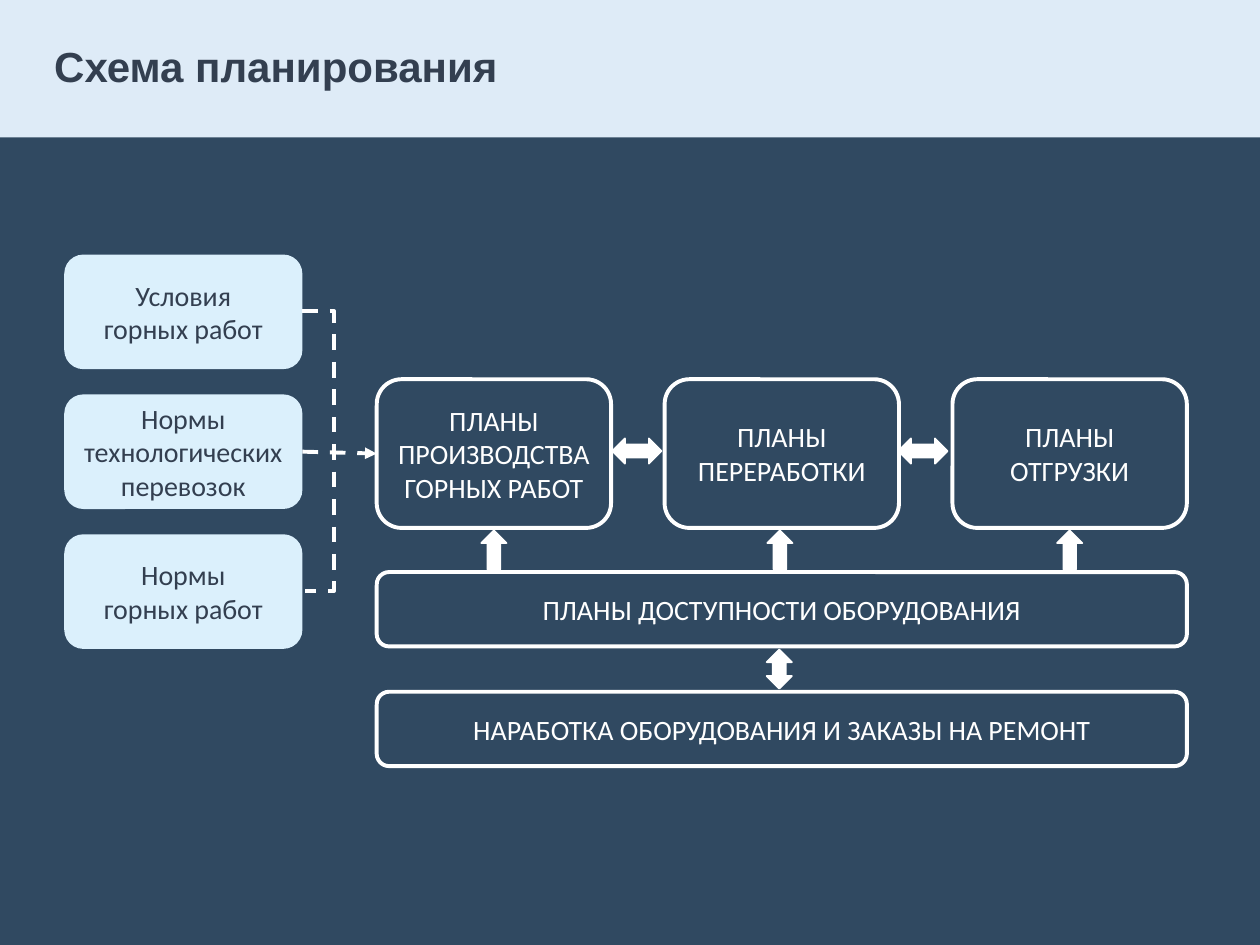
from lxml import etree
from pptx import Presentation
from pptx.dml.color import RGBColor
from pptx.enum.dml import MSO_LINE
from pptx.enum.shapes import MSO_CONNECTOR, MSO_SHAPE
from pptx.enum.text import MSO_ANCHOR, PP_ALIGN
from pptx.oxml.ns import qn
from pptx.util import Inches, Pt

NAVY = RGBColor(0x30, 0x49, 0x61)
BAND = RGBColor(0xDE, 0xEB, 0xF7)
PALE = RGBColor(0xDB, 0xF0, 0xFC)
INK = RGBColor(0x33, 0x3F, 0x50)
WHITE = RGBColor(0xFF, 0xFF, 0xFF)

RECTANGLE = MSO_SHAPE.RECTANGLE
ROUNDED = MSO_SHAPE.ROUNDED_RECTANGLE
UP_ARROW = MSO_SHAPE.UP_ARROW
DOUBLE_ARROW = MSO_SHAPE.LEFT_RIGHT_ARROW
STRAIGHT, ELBOW = MSO_CONNECTOR.STRAIGHT, MSO_CONNECTOR.ELBOW
DASH = MSO_LINE.DASH
MIDDLE = MSO_ANCHOR.MIDDLE
LEFT, CENTER = PP_ALIGN.LEFT, PP_ALIGN.CENTER
SIDE_LEFT, SIDE_RIGHT = 1, 3


class SlideBuilder:
    """Draws the elements of one slide in a shared style."""

    def __init__(self, slide):
        self.slide = slide
        self.slide.background.fill.solid()
        self.slide.background.fill.fore_color.rgb = NAVY

    def shape(self, kind, left, top, width, height, fill, line=None, weight=1):
        shape = self.slide.shapes.add_shape(
            kind, Inches(left), Inches(top), Inches(width), Inches(height))
        shape.shadow.inherit = False
        shape.fill.solid()
        shape.fill.fore_color.rgb = fill
        if line is None:
            shape.line.fill.background()
        else:
            shape.line.color.rgb = line
            shape.line.width = Pt(weight)
        return shape

    def label(self, shape, text, font, size, color, align, bold=False):
        frame = shape.text_frame
        frame.word_wrap = True
        frame.vertical_anchor = MIDDLE
        frame.text = text
        para = frame.paragraphs[0]
        para.alignment = align
        for span in para.runs:
            span.font.name = font
            span.font.size = Pt(size)
            span.font.bold = bold
            span.font.color.rgb = color
        return para

    def title(self, text, left, top, width, height):
        title = self.slide.shapes.title
        title.left, title.top = Inches(left), Inches(top)
        title.width, title.height = Inches(width), Inches(height)
        para = self.label(title, text, "Arial", 24, INK, LEFT, bold=True)
        para.line_spacing = 0.9

    def band(self, height):
        band = self.shape(RECTANGLE, 0, 0, 10, height, BAND)
        self.slide.shapes.title.element.addprevious(band.element)

    def source_box(self, text, *place):
        box = self.shape(ROUNDED, *place, PALE)
        self.label(box, text, "Calibri", 16, INK, CENTER)
        return box

    def plan_box(self, text, *place):
        box = self.shape(ROUNDED, *place, NAVY, WHITE, 2.25)
        self.label(box, text, "Calibri", 16, WHITE, CENTER)
        return box

    def double_arrow(self, *place, rotation=0):
        arrow = self.shape(DOUBLE_ARROW, *place, WHITE, WHITE)
        arrow.adjustments[0] = 0.51
        arrow.rotation = rotation

    def dashed(self, kind, left, top, right, bottom):
        line = self.slide.shapes.add_connector(
            kind, Inches(left), Inches(top), Inches(right), Inches(bottom))
        line.line.color.rgb = WHITE
        line.line.width = Pt(2.25)
        line.line.dash_style = DASH
        etree.SubElement(line.element.spPr, qn("a:effectLst"))
        return line

    def bracket(self, left, top, right, bottom, reach):
        line = self.dashed(ELBOW, left, top, right, bottom)
        guides = line.element.spPr.find(qn("a:prstGeom")).get_or_add_avLst()
        bend = round(reach / (right - left) * 100000)
        etree.SubElement(guides, qn("a:gd"), name="adj1", fmla=f"val {bend}")

    def arrow_between(self, start, end):
        line = self.dashed(STRAIGHT, 0, 0, 1, 1)
        line.begin_connect(start, SIDE_RIGHT)
        line.end_connect(end, SIDE_LEFT)
        etree.SubElement(line.element.spPr.find(qn("a:ln")), qn("a:tailEnd"),
                         type="triangle")


def main():
    deck = Presentation()
    deck.slide_width, deck.slide_height = Inches(10), Inches(7.5)
    page = SlideBuilder(deck.slides.add_slide(deck.slide_layouts[5]))

    # Heading
    page.band(1.09)
    page.title("Схема планирования", 0.33, 0.16, 6.06, 0.78)

    # Inputs on the left
    sources = ["Условия\vгорных работ", "Нормы технологических перевозок",
               "Нормы\vгорных работ"]
    source_boxes = [page.source_box(text, 0.51, 2.02 + 1.11 * row, 1.89, 0.91)
                    for row, text in enumerate(sources)]

    # Chain of plans
    plans = ["ПЛАНЫ ПРОИЗВОДСТВА ГОРНЫХ РАБОТ", "ПЛАНЫ ПЕРЕРАБОТКИ", "ПЛАНЫ ОТГРУЗКИ"]
    plan_boxes = [page.plan_box(text, 2.99 + 4.57 / 2 * column, 3.01, 1.86, 1.18)
                  for column, text in enumerate(plans)]

    # Equipment rows
    equipment = ["ПЛАНЫ ДОСТУПНОСТИ ОБОРУДОВАНИЯ",
                 "НАРАБОТКА ОБОРУДОВАНИЯ И ЗАКАЗЫ НА РЕМОНТ"]
    for row, text in enumerate(equipment):
        page.plan_box(text, 2.99, 4.54 + 0.95 * row, 6.43, 0.59)

    # Dashed links from the inputs
    page.bracket(2.4, 2.47, 2.42, 4.69, reach=0.25)
    page.arrow_between(source_boxes[1], plan_boxes[0])

    # Block arrows
    for left in (3.82, 6.09, 8.39):
        page.shape(UP_ARROW, left, 4.21, 0.2, 0.31, WHITE, WHITE)
    for left in (4.86, 7.13):
        page.double_arrow(left, 3.48, 0.39, 0.2)
    page.double_arrow(6.03, 5.21, 0.31, 0.2, rotation=270)

    deck.save("out.pptx")


if __name__ == "__main__":
    main()
